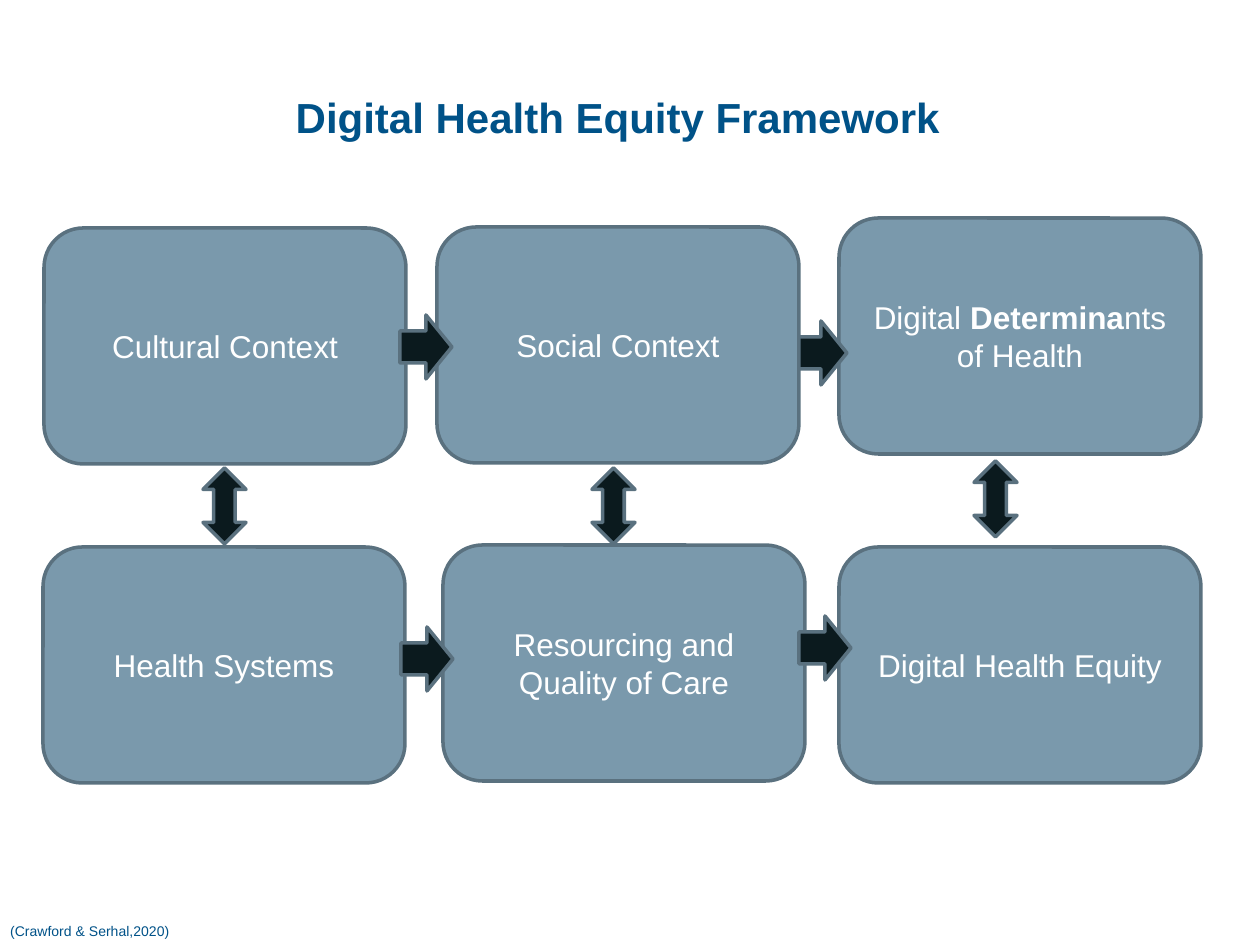
from dataclasses import dataclass
from pptx import Presentation
from pptx.dml.color import RGBColor as RGB
from pptx.enum.shapes import MSO_SHAPE as SHAPE
from pptx.enum.text import MSO_ANCHOR as ANCHOR, PP_ALIGN as ALIGN
from pptx.util import Emu, Pt


@dataclass(frozen=True)
class Theme:
    font: str = "Arial"
    blue: str = "005288"
    card: str = "7A99AC"
    edge: str = "5A717F"
    arrow: str = "0B1A1E"
    white: str = "FFFFFF"
    title: int = 24
    body: int = 18
    note: int = 8


T = Theme()
PX = 914400 / 126


def box(*lengths):
    return [Emu(round(n * PX)) for n in lengths]


def write(tf, text, size=T.body, color=T.white, bold=False, align=ALIGN.CENTER, anchor=ANCHOR.MIDDLE):
    tf.word_wrap = True
    tf.vertical_anchor = anchor
    p = tf.paragraphs[0]
    p.alignment = align
    r = p.add_run()
    r.text = text
    r.font.name = T.font
    r.font.size = Pt(size)
    r.font.bold = bold
    r.font.color.rgb = RGB.from_string(color)


prs = Presentation()
prs.slide_width, prs.slide_height = box(1260, 945)
s = prs.slides.add_slide(prs.slide_layouts[5])

title = s.shapes.title
title.left, title.top, title.width, title.height = box(63, 38, 1134, 158)
title.text_frame.margin_right = box(37)[0]
write(title.text_frame, "Digital Health Equity Framework", size=T.title, color=T.blue, bold=True)

note = s.shapes.add_textbox(*box(0, 916, 182, 28))
note.text_frame.margin_left = 0
write(note.text_frame, "(Crawford & Serhal,2020)", size=T.note, color=T.blue, align=ALIGN.RIGHT, anchor=ANCHOR.TOP)

CARD = (SHAPE.ROUNDED_RECTANGLE, 362, 236, T.card)
NEXT = (SHAPE.RIGHT_ARROW, 52, 64, T.arrow)
BOTH = (SHAPE.UP_DOWN_ARROW, 43, 76, T.arrow)

items = [
    (CARD, 839, 218, ["Digital ", "Determina", "nts of Health"]),
    (NEXT, 795, 321, []),
    (BOTH, 974, 461, []),
    (CARD, 839, 547, ["Digital Health Equity"]),
    (CARD, 437, 227, ["Social Context"]),
    (CARD, 44, 228, ["Cultural Context"]),
    (CARD, 443, 545, ["Resourcing and Quality of Care"]),
    (CARD, 43, 547, ["Health Systems"]),
    (NEXT, 799, 616, []),
    (NEXT, 400, 315, []),
    (NEXT, 401, 627, []),
    (BOTH, 592, 468, []),
    (BOTH, 203, 468, []),
]
for (kind, w, h, fill), x, y, runs in items:
    sp = s.shapes.add_shape(kind, *box(x, y, w, h))
    sp.shadow.inherit = False
    sp.fill.solid()
    sp.fill.fore_color.rgb = RGB.from_string(fill)
    sp.line.color.rgb = RGB.from_string(T.edge)
    sp.line.width = Pt(2)
    for i, text in enumerate(runs):
        write(sp.text_frame, text, bold=i == 1)

prs.save("out.pptx")
